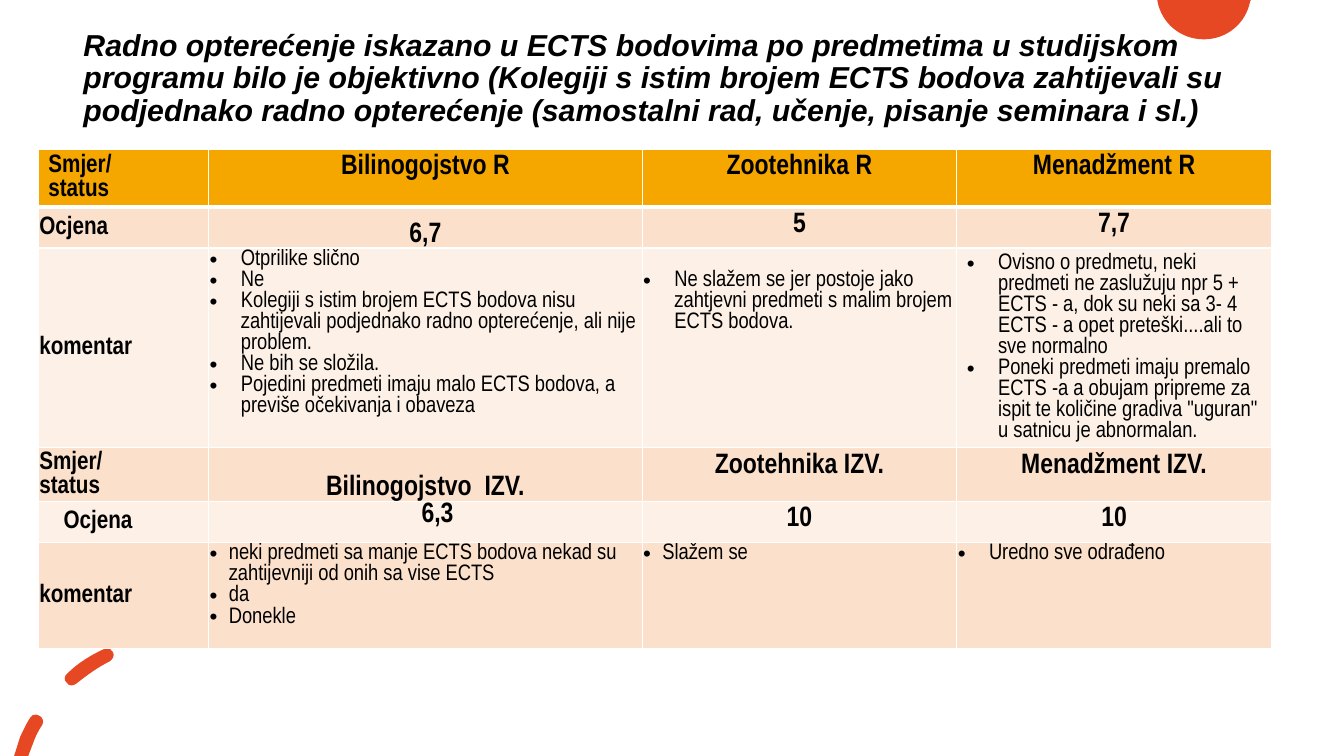
import pptx
import pptx.util
import pptx.dml.color
import pptx.enum.text
import pptx.oxml
import pptx.oxml.ns
import lxml.etree

Inches, Pt = pptx.util.Inches, pptx.util.Pt
ALIGN, ANCHOR = pptx.enum.text.PP_ALIGN, pptx.enum.text.MSO_ANCHOR
qn = pptx.oxml.ns.qn
W, H = 13.33, 7.5
COLORS = {"text": "000000", "accent": "E64823", "header": "F5A700",
          "band": "FBE1CC", "light": "FDF1E7", "border": "FFFFFF"}
TIGHT = (0.01, 0.01, 0.01, 0)
INDENTED = (0.25, 0.01, 0.01, 0)
NORMAL = (0.1, 0.05, 0.1, 0.05)
LOWERED = (0.01, 0.22, 0.01, 0)
LINE_PITCH = 0.94  # line height of the narrow font, as a share of its size

# Outlines: start point, then lines (2 numbers) and curves (6 numbers), in inches
SUN = [[(11.48, 0), (12.41, 0), (12.4, 0.01), (12.36, 0.23, 12.17, 0.39, 11.94, 0.39),
        (11.71, 0.39, 11.52, 0.23, 11.48, 0.01)]]
DASHES = [
    [(0.36, 7.09), (0.34, 7.08, 0.31, 7.1, 0.3, 7.12), (0.26, 7.18, 0.23, 7.25, 0.2, 7.31),
     (0.14, 7.5), (0.28, 7.5), (0.33, 7.37), (0.35, 7.31, 0.38, 7.25, 0.42, 7.19),
     (0.44, 7.16, 0.42, 7.11, 0.39, 7.1), (0.38, 7.09, 0.37, 7.09, 0.36, 7.09)],
    [(1.05, 6.43), (1.04, 6.43, 1.03, 6.43, 1.03, 6.44), (0.9, 6.5, 0.77, 6.58, 0.67, 6.68),
     (0.64, 6.7, 0.63, 6.75, 0.66, 6.77), (0.67, 6.79, 0.69, 6.8, 0.71, 6.8),
     (0.73, 6.8, 0.74, 6.79, 0.76, 6.78), (0.86, 6.7, 0.97, 6.62, 1.09, 6.56),
     (1.12, 6.54, 1.14, 6.5, 1.12, 6.47), (1.11, 6.44, 1.08, 6.43, 1.05, 6.43)],
    [(1.79, 6.25), (1.72, 6.25, 1.65, 6.26, 1.58, 6.27), (1.54, 6.27, 1.51, 6.31, 1.52, 6.35),
     (1.52, 6.38, 1.55, 6.41, 1.58, 6.41), (1.73, 6.39, 1.86, 6.39, 1.99, 6.4),
     (2.03, 6.41, 2.07, 6.38, 2.07, 6.35), (2.08, 6.31, 2.05, 6.27, 2.01, 6.27),
     (1.94, 6.26, 1.86, 6.25, 1.79, 6.25)]]

TITLE = ("Radno opterećenje iskazano u ECTS bodovima po predmetima u studijskom programu "
         "bilo je objektivno (Kolegiji s istim brojem ECTS bodova zahtijevali su podjednako "
         "radno opterećenje (samostalni rad, učenje, pisanje seminara i sl.)")


def label(*lines, margins=TIGHT, anchor=ANCHOR.MIDDLE):
    return dict(lines=lines, size=18, margins=margins, anchor=anchor)


def value(text, margins=NORMAL, anchor=ANCHOR.TOP):
    return dict(lines=[text], size=20, margins=margins, anchor=anchor, align=ALIGN.CENTER)


def comments(*lines, margins=TIGHT, indent=0.31):
    return dict(lines=lines, size=16, margins=margins, indent=indent, bold=False)


COLS = [1.69, 4.3, 3.12, 3.12]
# Each row: height, fill, cells
ROWS = [
    (0.56, "header", [label("Smjer/", "status", margins=NORMAL, anchor=ANCHOR.TOP),
                      value("Bilinogojstvo R"), value("Zootehnika R"), value("Menadžment R")]),
    (0.41, "band", [label("Ocjena"), value("6,7", TIGHT, ANCHOR.BOTTOM),
                    value("5"), value("7,7")]),
    (1.97, "light", [
        label("komentar"),
        comments("Otprilike slično", "Ne",
                 "Kolegiji s istim brojem ECTS bodova nisu zahtijevali podjednako radno "
                 "opterećenje, ali nije problem.",
                 "Ne bih se složila.",
                 "Pojedini predmeti imaju malo ECTS bodova, a previše očekivanja i obaveza"),
        comments("Ne slažem se jer postoje jako zahtjevni predmeti s malim brojem ECTS bodova.",
                 margins=LOWERED),
        comments("Ovisno o predmetu, neki predmeti ne zaslužuju npr 5 + ECTS - a, dok su neki "
                 "sa 3- 4 ECTS - a opet preteški....ali to sve normalno",
                 "Poneki predmeti imaju premalo ECTS -a a obujam pripreme za ispit te količine "
                 "gradiva \"uguran\" u satnicu je abnormalan.", margins=NORMAL)]),
    (0.53, "band", [label("Smjer/", "status"),
                    value("Bilinogojstvo  IZV.", TIGHT, ANCHOR.BOTTOM),
                    value("Zootehnika IZV."), value("Menadžment IZV.")]),
    (0.41, "light", [label("Ocjena", margins=INDENTED), value("6,3", INDENTED),
                     value("10"), value("10")]),
    (1.05, "band", [
        label("komentar"),
        comments("neki predmeti sa manje ECTS bodova nekad su zahtijevniji od onih sa vise ECTS",
                 "da", "Donekle", indent=0.19),
        comments("Slažem se", indent=0.19),
        comments("Uredno sve odrađeno")]),
]


def rgb(name):
    return pptx.dml.color.RGBColor.from_string(COLORS[name])


def add_run(p, text, size, font, bold=True, italic=False):
    r = p.add_run()
    r.text = text
    r.font.size, r.font.name = Pt(size), font
    r.font.bold, r.font.italic = bold, italic
    r.font.color.rgb = rgb("text")


def set_margins(target, margins):
    (target.margin_left, target.margin_top,
     target.margin_right, target.margin_bottom) = map(Inches, margins)


def add_decoration(slide, outlines):
    fb = None
    for outline in outlines:
        points = [tuple(map(Inches, seg[-2:])) for seg in outline]
        if fb is None:
            fb = slide.shapes.build_freeform(*points[0])
        else:
            fb.move_to(*points[0])
        fb.add_line_segments(points[1:], close=True)
    sp = fb.convert_to_shape()
    sp.shadow.inherit = False
    sp.fill.solid()
    sp.fill.fore_color.rgb = rgb("accent")
    sp.line.fill.background()
    # Bend the segments that have control points
    segments = [seg for outline in outlines for seg in outline[1:]]
    for line, seg in zip(list(sp._element.iter(qn("a:lnTo"))), segments):
        if len(seg) == 6:
            line.tag = qn("a:cubicBezTo")
            controls = [(seg[0], seg[1]), (seg[2], seg[3])]
            for i, (x, y) in enumerate(controls):
                pt = lxml.etree.Element(qn("a:pt"), x=str(Inches(x) - sp.left),
                                        y=str(Inches(y) - sp.top))
                line.insert(i, pt)


def add_title(slide, box):
    tf = slide.shapes.add_textbox(*map(Inches, box)).text_frame
    tf.word_wrap = True
    tf.vertical_anchor = ANCHOR.MIDDLE
    p = tf.paragraphs[0]
    p.line_spacing = 0.9
    add_run(p, TITLE, 21.6, "Arial", italic=True)


def set_borders(cell, widths):
    tcPr = cell._tc.get_or_add_tcPr()
    for i, (side, width) in enumerate(zip("LRTB", widths)):
        ln = lxml.etree.Element(qn("a:ln" + side), w=str(Pt(width)))
        fill = lxml.etree.SubElement(ln, qn("a:solidFill"))
        lxml.etree.SubElement(fill, qn("a:srgbClr"), val=COLORS["border"])
        tcPr.insert(i, ln)


def set_bullet(p, indent):
    pPr = p._p.get_or_add_pPr()
    pPr.set("marL", str(Inches(indent)))
    pPr.set("indent", str(-Inches(indent)))
    lxml.etree.SubElement(pPr, qn("a:buFont"), typeface="Arial")
    lxml.etree.SubElement(pPr, qn("a:buChar"), char="•")


def fill_cell(cell, fill, lines, size, margins, anchor=ANCHOR.TOP, align=ALIGN.LEFT,
              indent=0, bold=True):
    cell.fill.solid()
    cell.fill.fore_color.rgb = rgb(fill)
    cell.vertical_anchor = anchor
    set_margins(cell, margins)
    tf = cell.text_frame
    for i, text in enumerate(lines):
        p = tf.add_paragraph() if i else tf.paragraphs[0]
        p.alignment = align
        p.line_spacing = Pt(size * LINE_PITCH)
        if indent:
            set_bullet(p, indent)
        add_run(p, text, size, "Arial Narrow", bold)


def add_ratings_table(slide, box):
    left, top, width, height = box
    tbl = slide.shapes.add_table(len(ROWS), len(COLS), *map(Inches, box)).table
    for col, share in zip(tbl.columns, COLS):
        col.width = Inches(width * share / sum(COLS))
    total = sum(row[0] for row in ROWS)
    for i, (share, fill, cells) in enumerate(ROWS):
        tbl.rows[i].height = Inches(height * share / total)
        for j, content in enumerate(cells):
            cell = tbl.cell(i, j)
            fill_cell(cell, fill, **content)
            set_borders(cell, (1, 1, 1, 1 if i else 3))


def main():
    prs = pptx.Presentation()
    prs.slide_width, prs.slide_height = Inches(W), Inches(H)
    slide = prs.slides.add_slide(prs.slide_layouts[6])
    # Corner decorations
    add_decoration(slide, SUN)
    add_decoration(slide, DASHES)
    # Question and ratings
    add_title(slide, (0.73, 0.22, 11.77, 1.13))
    add_ratings_table(slide, (0.38, 1.48, 12.23, 4.93))
    prs.save("out.pptx")


if __name__ == "__main__":
    main()
